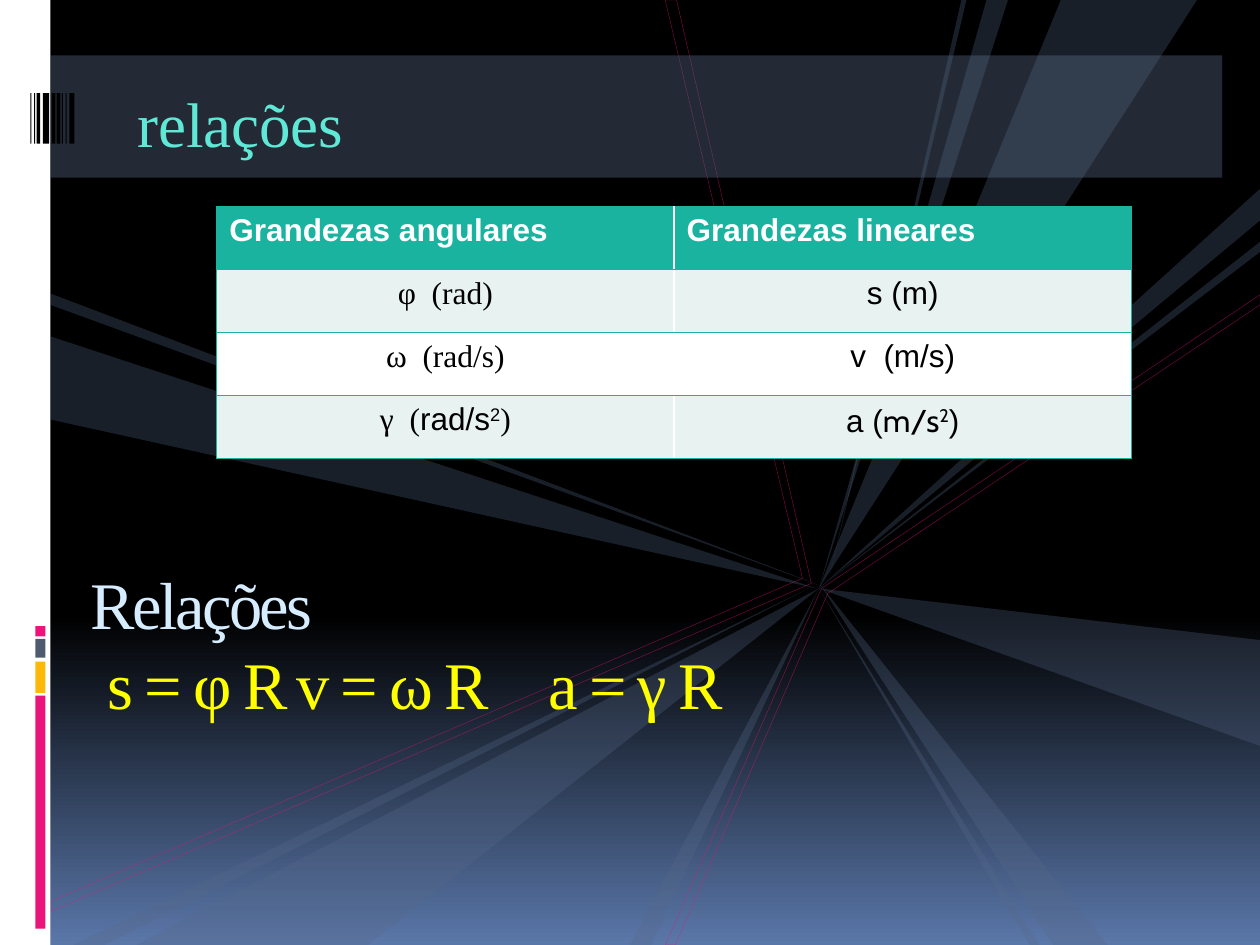
from typing import NamedTuple

from lxml.etree import SubElement
from pptx import Presentation
from pptx.dml.color import RGBColor as RGB
from pptx.enum.shapes import MSO_SHAPE as Shape
from pptx.enum.text import MSO_ANCHOR as Anchor, MSO_AUTO_SIZE as AutoSize, PP_ALIGN as Align
from pptx.oxml.ns import qn
from pptx.util import Inches, Pt

SERIF, SANS, HUMANIST = "Times New Roman", "Arial", "Cabin"
COLORS = {
    "black": "000000", "white": "FFFFFF", "sky": "5A77A9", "pink": "EA157A",
    "amber": "FEB80A", "slate": "4E5B6F", "ray": "566989", "band": "586A86",
    "mint": "5FE8D6", "ice": "D6ECFF", "yellow": "FFFF00",
    "teal": "1AB39F", "pale": "E8F2F0",
}


class Bar(NamedTuple):
    left: float
    top: float
    width: float
    height: float
    color: str
    opacity: int = 100


class Piece(NamedTuple):
    text: str
    font: str
    raised: bool = False


Points = list[tuple[float, float]]

SIDE_BARS = [
    Bar(0, 0, 0.4, 7.5, "white"),
    Bar(0.28, 5.52, 0.08, 1.85, "pink"),
    Bar(0.28, 5.25, 0.08, 0.25, "amber"),
    Bar(0.28, 5.07, 0.08, 0.15, "slate"),
    Bar(0.28, 4.97, 0.08, 0.08, "pink"),
]
TITLE_BAND = Bar(0.4, 0.44, 9.3, 0.97, "band", 40)
STRIPES = [
    (0.24, 0.01), (0.27, 0.01), (0.29, 0.03), (0.34, 0.05), (0.41, 0.03),
    (0.45, 0.03), (0.49, 0.01), (0.52, 0.01), (0.55, 0.04),
]
OUTLINES: list[Points] = [
    [(5.28, 7.5), (6.52, 4.67), (10, 2.34), (10, 2.42), (6.57, 4.71), (5.36, 7.5)],
    [(0.41, 7.15), (0.41, 7.23), (6.44, 4.63), (5.37, 0), (5.28, 0), (6.37, 4.59)],
]
RAYS: list[Points] = [
    [(7.67, 0), (6.59, 4.55), (7.63, 0)],
    [(8.42, 0), (9.5, 0), (6.5, 4.67)],
    [(6.5, 4.67), (10, 5.08), (10, 5.92)],
    [(8, 0), (6.5, 4.67), (7.83, 0)],
    [(8.36, 7.5), (8.79, 7.5), (6.51, 4.64)],
    [(8.25, 7.5), (6.5, 4.67), (8.17, 7.5)],
    [(10, 1.5), (10, 1.75), (6.5, 4.67)],
    [(10, 1.92), (6.5, 4.67), (10, 2)],
    [(1.08, 7.5), (6.5, 4.67), (2.92, 7.5)],
    [(0.58, 7.5), (6.42, 4.67), (0.83, 7.5)],
    [(0.4, 2.67), (6.48, 4.67), (0.4, 3.33)],
    [(0.4, 2.33), (6.57, 4.67), (0.4, 2.42)],
    [(5, 7.5), (5.17, 7.5), (6.5, 4.67)],
]
QUANTITIES = [
    [[Piece("Grandezas angulares", SANS)], [Piece("Grandezas lineares", SANS)]],
    [[Piece("φ  (rad)", SERIF)], [Piece("s (m)", SANS)]],
    [[Piece("ω  (rad/s)", SERIF)], [Piece("v  (m/s)", SANS)]],
    [
        [Piece("γ  (", SERIF), Piece("rad/s", SANS), Piece("2", SANS, True), Piece(")", SERIF)],
        [Piece("a (", SANS), Piece("m/s", HUMANIST), Piece("2", HUMANIST, True), Piece(")", SANS)],
    ],
]
ROW_FILLS = ["teal", "pale", "white", "pale"]
FORMULAS = ["s = φ R", "v = ω R", "a = γ R"]


def rgb(name: str) -> RGB:
    return RGB.from_string(COLORS[name])


def paint(fill, color: str, opacity: int = 100) -> None:
    fill.solid()
    fill.fore_color.rgb = rgb(color)
    if opacity < 100:
        tint = fill._xPr.find(".//" + qn("a:srgbClr"))
        SubElement(tint, qn("a:alpha"), val=str(opacity * 1000))


def paint_background(slide) -> None:
    sky = slide.background.fill
    sky.gradient()
    sky.gradient_angle = 270
    stops = slide.element.find(".//" + qn("a:gsLst"))
    for stop in list(stops):
        stops.remove(stop)
    for position, color in [(0, "black"), (65, "black"), (100, "sky")]:
        stop = SubElement(stops, qn("a:gs"), pos=str(position * 1000))
        SubElement(stop, qn("a:srgbClr"), val=COLORS[color])


def draw_bar(slide, bar: Bar) -> None:
    rect = slide.shapes.add_shape(Shape.RECTANGLE, *map(Inches, bar[:4]))
    rect.shadow.inherit = False
    rect.line.fill.background()
    paint(rect.fill, bar.color, bar.opacity)


def draw_polygon(slide, points: Points, outlined: bool = False) -> None:
    corners = [(Inches(x), Inches(y)) for x, y in points]
    builder = slide.shapes.build_freeform(*corners[0])
    builder.add_line_segments(corners[1:], close=True)
    polygon = builder.convert_to_shape()
    polygon.shadow.inherit = False
    if outlined:
        polygon.fill.background()
        polygon.line.width = Pt(0.25)
        paint(polygon.line.fill, "pink", 53)
    else:
        polygon.line.fill.background()
        paint(polygon.fill, "ray", 30)


def style(paragraph, size: float, color: str, name: str | None = None) -> None:
    paragraph.font.size = Pt(size)
    paragraph.font.color.rgb = rgb(color)
    if name:
        paragraph.font.name = name


def draw_heading(slide) -> None:
    box = slide.shapes.add_textbox(Inches(0.94), Inches(0.62), Inches(8.67), Inches(1.07))
    frame = box.text_frame
    frame.word_wrap = True
    frame.margin_left, frame.margin_bottom = Inches(0.15), 0
    heading = frame.paragraphs[0]
    heading.text = "relações"
    heading.space_before = Pt(7)
    style(heading, 36, "mint", SERIF)


def fill_title(slide) -> None:
    title = slide.shapes.title
    slide.shapes.element.append(title.element)
    title.left, title.top = Inches(0.62), Inches(4.4)
    title.width, title.height = Inches(8.92), Inches(1.4)
    frame = title.text_frame
    frame.word_wrap = True
    frame.auto_size = AutoSize.NONE
    frame.vertical_anchor = Anchor.TOP
    frame.margin_top = Inches(0.07)
    frame.text = "Relações\n" + "\t".join(FORMULAS)
    for paragraph, color in zip(frame.paragraphs, ["ice", "yellow"]):
        paragraph.alignment = Align.LEFT
        style(paragraph, 38, color, SERIF)
        for run in paragraph.runs:
            run.font._element.set("spc", "-150")
    layout = frame.paragraphs[1]._p.get_or_add_pPr()
    layout.set("marL", str(Inches(0.13)))
    layout.set("indent", "0")
    tabs = layout.makeelement(qn("a:tabLst"))
    layout.find(qn("a:defRPr")).addprevious(tabs)
    for stop in (3, 6):
        SubElement(tabs, qn("a:tab"), pos=str(Inches(stop)), algn="l")


def add_borders(cell, sides: list[str]) -> None:
    properties = cell._tc.get_or_add_tcPr()
    for index, side in enumerate(sides):
        border = properties.makeelement(qn(f"a:ln{side}"), w=str(Pt(1)))
        properties.insert(index, border)
        line = SubElement(border, qn("a:solidFill"))
        SubElement(line, qn("a:srgbClr"), val=COLORS["teal"])


def draw_quantities(slide) -> None:
    table = slide.shapes.add_table(
        len(QUANTITIES), 2, Inches(1.72), Inches(1.64), Inches(7.26), Inches(2)
    ).table
    for r, row in enumerate(QUANTITIES):
        for c, pieces in enumerate(row):
            cell = table.cell(r, c)
            paint(cell.fill, ROW_FILLS[r])
            add_borders(cell, ["R" if c else "L", "T", "B"])
            paragraph = cell.text_frame.paragraphs[0]
            paragraph.alignment = Align.CENTER if r else Align.LEFT
            style(paragraph, 18, "black" if r else "white")
            paragraph.font.bold = r == 0
            for piece in pieces:
                run = paragraph.add_run()
                run.text = piece.text
                run.font.name = piece.font
                if piece.raised:
                    run.font._element.set("baseline", "30000")


def main() -> None:
    deck = Presentation()
    deck.slide_width, deck.slide_height = Inches(10), Inches(7.5)
    slide = deck.slides.add_slide(deck.slide_layouts[5])
    paint_background(slide)
    for bar in SIDE_BARS:
        draw_bar(slide, bar)
    for points in OUTLINES:
        draw_polygon(slide, points, outlined=True)
    for points in RAYS:
        draw_polygon(slide, points)
    draw_bar(slide, TITLE_BAND)
    for left, width in STRIPES:
        draw_bar(slide, Bar(left, 0.74, width, 0.4, "black"))
    draw_heading(slide)
    fill_title(slide)
    draw_quantities(slide)
    deck.save("out.pptx")


if __name__ == "__main__":
    main()
